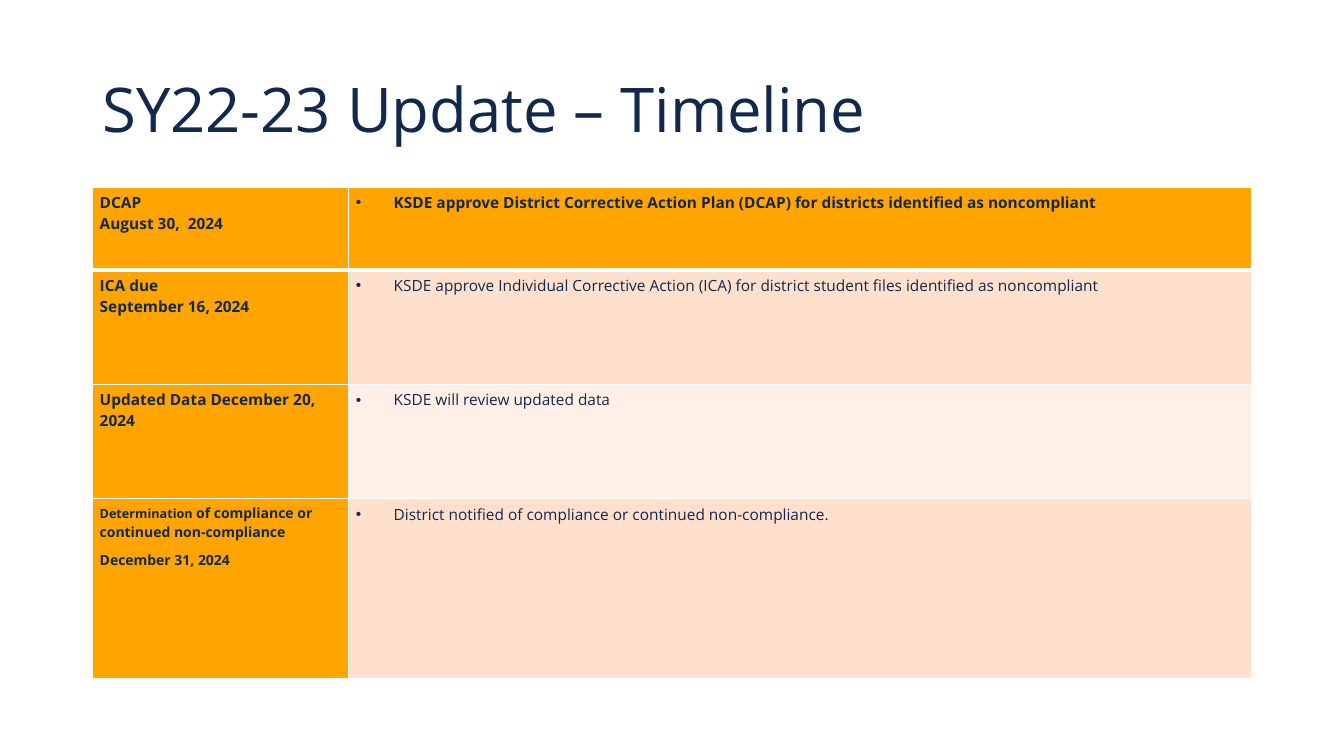
from dataclasses import dataclass

from lxml import etree
from pptx import Presentation
from pptx import util as u
from pptx.dml.color import RGBColor
from pptx.enum import text
from pptx.oxml.ns import qn

PX = 9525
FONT, NAVY, GOLD, WHITE = "Open Sans", "12284C", "FFA400", "FFFFFF"
PEACH, CREAM = "FFE0CC", "FFF0E7"
COLS = (244, 860)
PADS = {"margin_left": 7, "margin_right": 7, "margin_top": 5, "margin_bottom": 5}
INDENT = 36


@dataclass
class Run:
    text: str
    size: int = 11


@dataclass
class Step:
    height: int
    label: list[list[Run]]
    task: str
    fill: str
    after: int = 0
    bold: bool = False


STEPS = [
    Step(79, [[Run("DCAP")], [Run("August 30,  2024")]],
         "KSDE approve District Corrective Action Plan (DCAP) for districts "
         "identified as noncompliant", GOLD, bold=True),
    Step(109, [[Run("ICA due")], [Run("September 16, 2024")]],
         "KSDE approve Individual Corrective Action (ICA) for district student "
         "files identified as noncompliant", PEACH),
    Step(109, [[Run("Updated Data December 20, 2024")]],
         "KSDE will review updated data", CREAM, after=6),
    Step(171, [[Run("Determination", 9),
                Run(" of compliance or continued non-compliance", 10)],
               [Run("December 31, 2024", 10)]],
         "District notified of compliance or continued non-compliance.",
         PEACH, after=6),
]


def px(n: int) -> u.Emu:
    return u.Emu(n * PX)


def color(code: str) -> RGBColor:
    return RGBColor.from_string(code)


def assign(item, values: dict) -> None:
    for name, value in values.items():
        setattr(item, name, value)


def add_run(para, run: Run, bold: bool) -> None:
    part = para.add_run()
    part.text = run.text
    assign(part.font, {"name": FONT, "size": u.Pt(run.size), "bold": bold})
    part.font.color.rgb = color(NAVY)


def add_bullet(para) -> None:
    props = para._p.get_or_add_pPr()
    props.set("marL", str(px(INDENT)))
    props.set("indent", str(-px(INDENT)))
    etree.SubElement(props, qn("a:buFont")).set("typeface", "Arial")
    etree.SubElement(props, qn("a:buChar")).set("char", "•")


def add_edges(cell, widths: dict[str, int]) -> None:
    props = cell._tc.get_or_add_tcPr()
    for spot, (side, width) in enumerate(widths.items()):
        line = etree.Element(qn(f"a:ln{side}"), w=str(u.Pt(width)))
        fill = etree.SubElement(line, qn("a:solidFill"))
        etree.SubElement(fill, qn("a:srgbClr")).set("val", WHITE)
        props.insert(spot, line)


def fill_cell(cell, lines: list[list[Run]], fill: str, after: int,
              bold: bool, bullet: bool) -> None:
    assign(cell, {name: px(pad) for name, pad in PADS.items()})
    cell.fill.solid()
    cell.fill.fore_color.rgb = color(fill)
    frame = cell.text_frame
    for i, runs in enumerate(lines):
        para = frame.add_paragraph() if i else frame.paragraphs[0]
        if bullet:
            add_bullet(para)
        if after:
            para.space_after = u.Pt(after)
        for run in runs:
            add_run(para, run, bold)


def add_title(slide, words: str) -> None:
    box = slide.shapes.add_textbox(px(88), px(38), px(1104), px(139))
    frame = box.text_frame
    assign(frame, {"word_wrap": True, "vertical_anchor": text.MSO_ANCHOR.MIDDLE})
    para = frame.paragraphs[0]
    para.line_spacing = 0.9
    add_run(para, Run(words, 44), False)


def add_steps(slide, steps: list[Step]) -> None:
    high = sum(step.height for step in steps)
    table = slide.shapes.add_table(len(steps), len(COLS), px(88), px(178),
                                   px(sum(COLS)), px(high)).table
    for col, width in zip(table.columns, COLS):
        col.width = px(width)
    for i, step in enumerate(steps):
        table.rows[i].height = px(step.height)
        date, task = table.cell(i, 0), table.cell(i, 1)
        fill_cell(date, step.label, GOLD, step.after, True, False)
        fill_cell(task, [[Run(step.task)]], step.fill, step.after, step.bold, True)
        # Thick rule under the first row
        edges = {"L": 1, "R": 1, "T": 3 if i == 1 else 1, "B": 3 if i == 0 else 1}
        for cell in (date, task):
            add_edges(cell, edges)


def main() -> None:
    deck = Presentation()
    assign(deck, {"slide_width": px(1280), "slide_height": px(720)})
    slide = deck.slides.add_slide(deck.slide_layouts[6])
    # Heading
    add_title(slide, "SY22-23 Update – Timeline")
    # Timeline table
    add_steps(slide, STEPS)
    deck.save("out.pptx")


if __name__ == "__main__":
    main()
